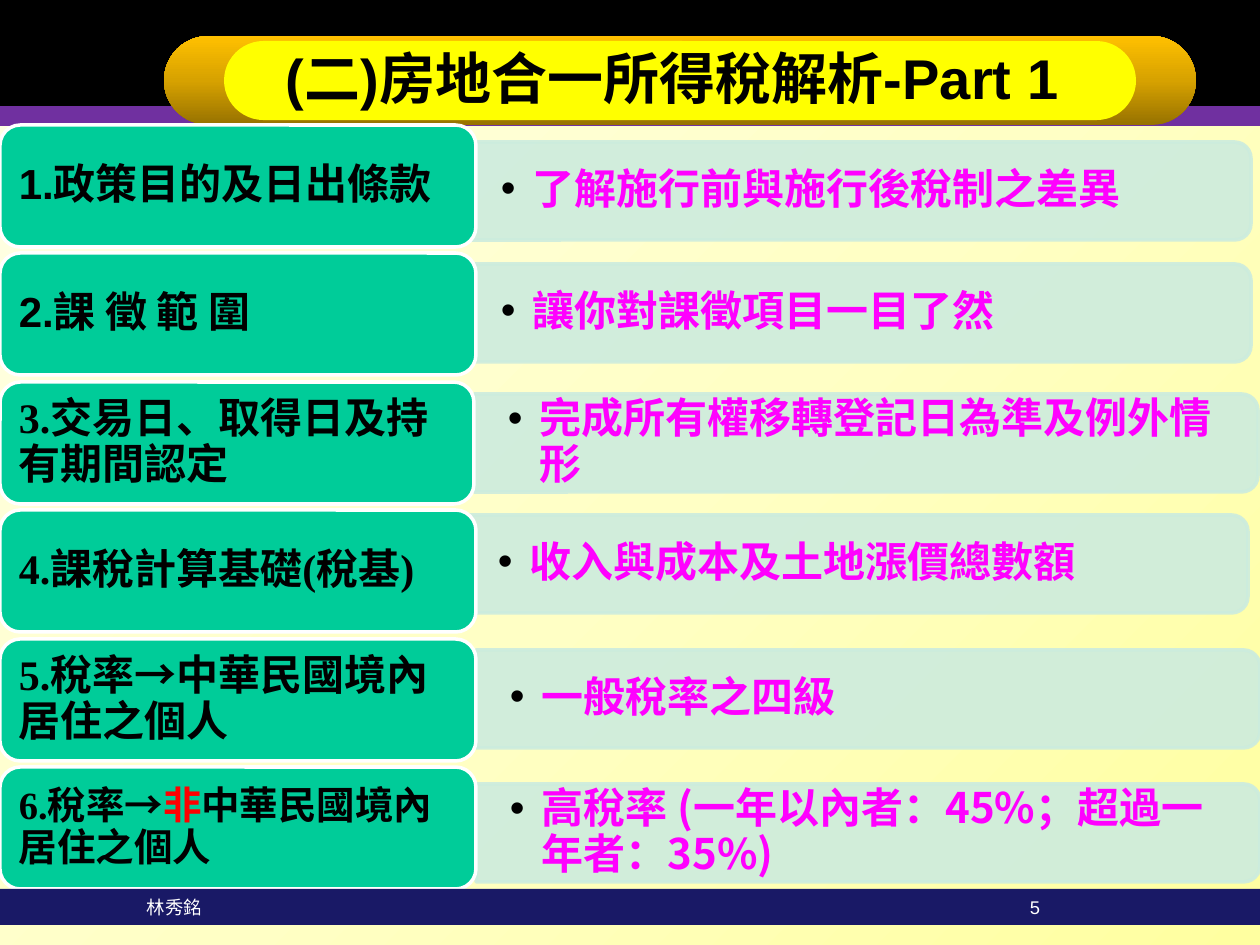
from dataclasses import dataclass
from typing import NamedTuple

from lxml.etree import SubElement
from pptx import Presentation
from pptx.dml.color import RGBColor
from pptx.enum.shapes import MSO_SHAPE
from pptx.enum.text import MSO_ANCHOR, MSO_AUTO_SIZE, PP_ALIGN
from pptx.oxml.ns import qn
from pptx.util import Emu, Pt

SCALE = 914400 / 126


@dataclass(frozen=True)
class Theme:
    black: str = "000000"
    white: str = "FFFFFF"
    red: str = "FF0000"
    pink: str = "FF00FF"
    green: str = "00CC99"
    mint: str = "CCECDE"
    purple: str = "7030A0"
    yellow: str = "FFFF00"
    navy: str = "191966"
    cream: tuple = ("FFFFA0", "FFFFC5", "FFFFE3")
    gold: tuple = ("977200", "D7A200", "FFC000")
    head: float = 32
    body: float = 24
    small: float = 22
    foot: float = 10.5
    sans: str = "Arial"
    serif: str = "Times New Roman"
    han: str = "Noto Sans CJK TC"
    note: str = "Noto Sans CJK SC"


T = Theme()


class Box(NamedTuple):
    x: int
    y: int
    w: int
    h: int


class Part(NamedTuple):
    text: str
    font: str
    size: float = T.body
    color: str = T.black
    bold: bool = True


class Row(NamedTuple):
    label: list[Part]
    note: str
    left: int
    mid: int
    wide: int = 476


ROWS = [
    Row([Part("1.", T.sans), Part("政策目的及日出條款", T.han)],
        "了解施行前與施行後稅制之差異", 467, 191),
    Row([Part("2.", T.sans), Part("課 徵 範 圍", T.han)],
        "讓你對課徵項目一目了然", 467, 313),
    Row([Part("3.交易日、取得日及持有期間認定", T.serif)],
        "完成所有權移轉登記日為準及例外情形", 474, 443, 474),
    Row([Part("4.課稅計算基礎(稅基)", T.serif)],
        "收入與成本及土地漲價總數額", 464, 564),
    Row([Part("5.稅率→中華民國境內居住之個人", T.serif)],
        "一般稅率之四級", 476, 699),
    Row([Part("6.稅率→", T.serif, T.small),
         Part("非", T.serif, T.small, T.red),
         Part("中華民國境內居住之個人", T.serif, T.small)],
        "高稅率 (一年以內者：45%；超過一年者：35%)", 476, 833),
]


def px(n: float) -> Emu:
    return Emu(round(n * SCALE))


def rgb(code: str) -> RGBColor:
    return RGBColor.from_string(code)


def place(item, box: Box) -> None:
    item.left, item.top, item.width, item.height = map(px, box)


def shape(slide, kind, box: Box, color: str | None = None):
    item = slide.shapes.add_shape(kind, *map(px, box))
    item.shadow.inherit = False
    item.line.fill.background()
    if color:
        item.fill.solid()
        item.fill.fore_color.rgb = rgb(color)
    return item


def edge(item, color: str) -> None:
    item.line.color.rgb = rgb(color)
    item.line.width = Pt(2)


def blend(item, colors: tuple, angle: int) -> None:
    item.fill.gradient()
    grad = item.element.spPr.find(qn("a:gradFill"))
    stops = grad.find(qn("a:gsLst"))
    for old in list(stops):
        stops.remove(old)
    for i, color in enumerate(colors):
        stop = SubElement(stops, qn("a:gs"), pos=str(i * 50000))
        SubElement(stop, qn("a:srgbClr"), val=color)
    grad.find(qn("a:lin")).set("ang", str(angle * 60000))


def write(item, parts: list[Part], pad: tuple[int, int] = (13, 6)):
    frame = item.text_frame
    frame.word_wrap = True
    frame.auto_size = MSO_AUTO_SIZE.NONE
    frame.vertical_anchor = MSO_ANCHOR.MIDDLE
    frame.margin_left = frame.margin_right = px(pad[0])
    frame.margin_top = frame.margin_bottom = px(pad[1])
    para = frame.paragraphs[0]
    para.alignment = PP_ALIGN.LEFT
    for part in parts:
        run = para.add_run()
        run.text = part.text
        font = run.font
        font.name, font.size, font.bold = part.font, Pt(part.size), part.bold
        font.color.rgb = rgb(part.color)
        east = T.note if part.font == T.note else T.han
        SubElement(run._r.rPr, qn("a:ea"), typeface=east)
    return para


def bullet(para) -> None:
    props = para._p.get_or_add_pPr()
    props.set("marL", str(px(32)))
    props.set("indent", str(px(-32)))
    tint = SubElement(props, qn("a:buClr"))
    SubElement(tint, qn("a:srgbClr"), val=T.black)
    SubElement(props, qn("a:buFont"), typeface=T.sans)
    SubElement(props, qn("a:buChar"), char="•")


def panel(slide, row: Row) -> None:
    long, thick = 784, 98
    box = Box(row.left + (long - thick) // 2, row.mid - long // 2, thick, long)
    item = shape(slide, MSO_SHAPE.ROUND_2_SAME_RECTANGLE, box, T.mint)
    item.rotation = 90
    edge(item, T.mint)
    for tint in item.element.spPr.iter(qn("a:srgbClr")):
        SubElement(tint, qn("a:alpha"), val="90000")
    area = Box(row.left, row.mid - 44, 779, 88)
    text = slide.shapes.add_textbox(*map(px, area))
    para = write(text, [Part(row.note, T.note, color=T.pink)], (34, 18))
    bullet(para)
    para.line_spacing = 0.9


def card(slide, row: Row, top: int) -> None:
    box = Box(0, top, row.wide, 122)
    item = shape(slide, MSO_SHAPE.ROUNDED_RECTANGLE, box, T.green)
    edge(item, T.white)
    write(item, row.label).line_spacing = 0.9


def pill(slide, box: Box, color: str | None = None):
    item = shape(slide, MSO_SHAPE.ROUNDED_RECTANGLE, box, color)
    item.adjustments[0] = 0.5
    return item


def main() -> None:
    deck = Presentation()
    deck.slide_width, deck.slide_height = px(1260), px(945)
    slide = deck.slides.add_slide(deck.slide_layouts[5])
    slide.background.fill.solid()
    slide.background.fill.fore_color.rgb = rgb(T.black)

    page = shape(slide, MSO_SHAPE.RECTANGLE, Box(0, 125, 1260, 820))
    blend(page, T.cream, 225)
    shape(slide, MSO_SHAPE.RECTANGLE, Box(0, 106, 1260, 20), T.purple)
    blend(pill(slide, Box(164, 36, 1032, 89)), T.gold, 270)
    pill(slide, Box(224, 41, 912, 79), T.yellow)

    title = slide.shapes.title
    place(title, Box(273, 37, 863, 81))
    write(title, [Part("(二)房地合一所得稅解析-Part 1", T.sans, T.head)])
    slide.shapes.element.append(title.element)

    for i, row in enumerate(ROWS):
        panel(slide, row)
        card(slide, row, 125 + i * 257 // 2)

    bar = shape(slide, MSO_SHAPE.RECTANGLE, Box(0, 889, 1260, 36), T.navy)
    write(bar, [Part("林秀銘", T.sans, T.foot, T.white, False)], (147, 6))
    count = slide.shapes.add_textbox(*map(px, Box(1017, 889, 67, 36)))
    write(count, [Part("5", T.sans, T.foot, T.white, False)])
    deck.save("out.pptx")


if __name__ == "__main__":
    main()
